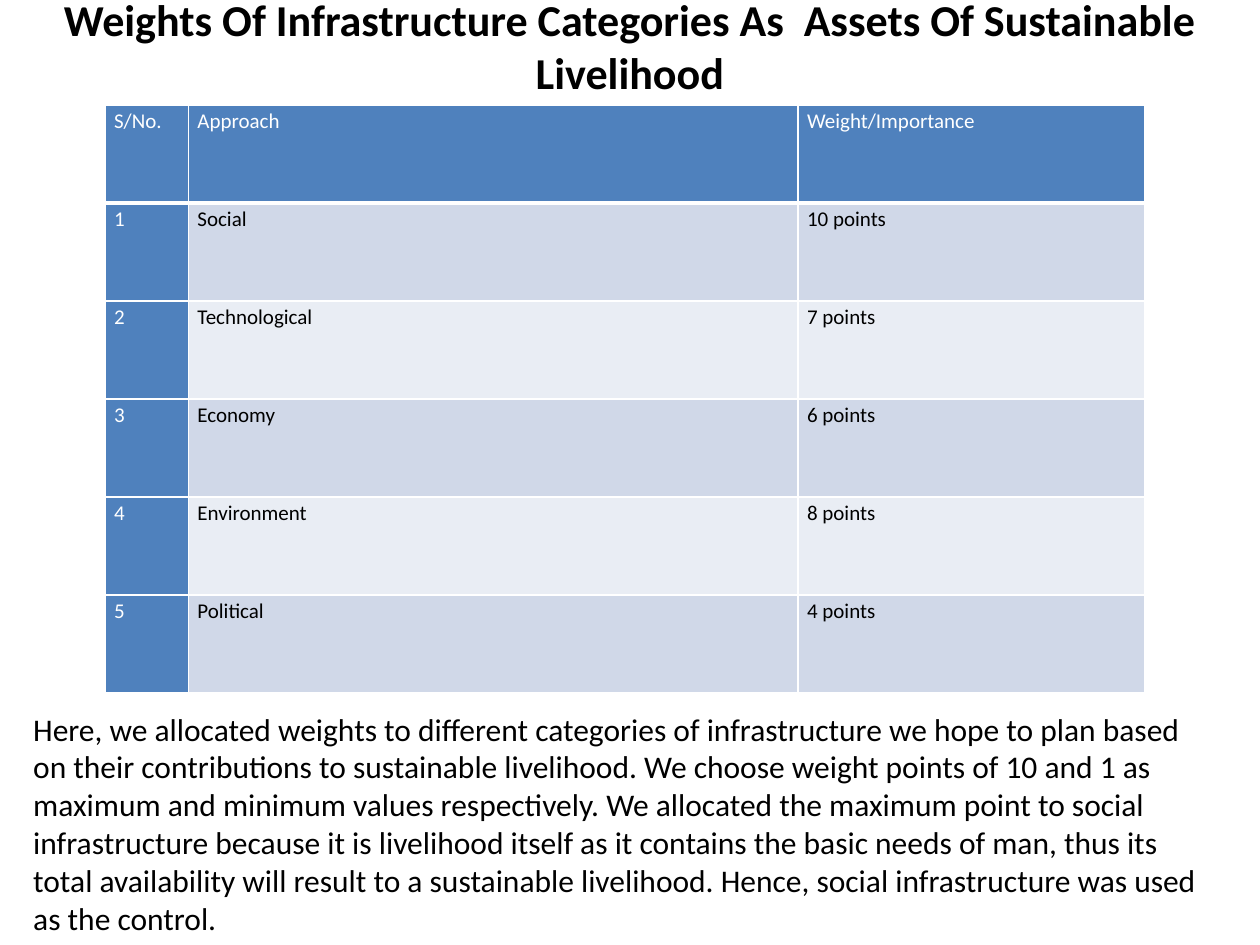
from lxml.etree import SubElement
from pptx import Presentation
from pptx.dml.color import RGBColor
from pptx.enum.text import MSO_ANCHOR as Anchor, MSO_AUTO_SIZE as AutoSize, PP_ALIGN as Align
from pptx.oxml.ns import qn
from pptx.util import Cm, Pt

COLOURS = {"ink": "000000", "white": "FFFFFF", "head": "4F81BD", "odd": "D0D8E8", "even": "E9EDF4"}
TITLE = "Weights Of Infrastructure Categories As  Assets Of Sustainable Livelihood"
ROWS = [
    ("S/No.", "Approach", "Weight/Importance"),
    ("1", "Social", "10 points"),
    ("2", "Technological", "7 points"),
    ("3", "Economy", "6 points"),
    ("4", "Environment", "8 points"),
    ("5", "Political", "4 points"),
]
COLUMN_WIDTHS = (1.68, 12.29, 6.98)
EXPLANATION = (
    "Here, we allocated weights to different categories of infrastructure we hope to plan based on "
    "their contributions to sustainable livelihood. We choose weight points of 10 and 1 as maximum "
    "and minimum values respectively. We allocated the maximum point to social infrastructure "
    "because it is livelihood itself as it contains the basic needs of man, thus its total "
    "availability will result to a sustainable livelihood. Hence, social infrastructure was used as "
    "the control."
)


def rgb(name):
    """Return the named palette colour."""
    return RGBColor.from_string(COLOURS[name])


def write(frame, text, size, colour="ink", bold=False, align=Align.LEFT):
    """Fill a text frame with one formatted paragraph and return it."""
    frame.text = text
    frame.word_wrap = True
    para = frame.paragraphs[0]
    para.alignment = align
    font = para.runs[0].font
    font.name, font.size, font.bold = "Calibri", Pt(size), bold
    font.color.rgb = rgb(colour)
    return para


def add_borders(cell, bottom):
    """Draw white borders round a cell, with the bottom one as wide as given."""
    properties = cell._tc.get_or_add_tcPr()
    for position, (side, width) in enumerate((("L", 1), ("R", 1), ("T", 1), ("B", bottom))):
        line = properties.makeelement(qn(f"a:ln{side}"), {"w": str(Pt(width))})
        fill = SubElement(line, qn("a:solidFill"))
        SubElement(fill, qn("a:srgbClr"), val=COLOURS["white"])
        properties.insert(position, line)


def place_title(page, left, top, width, height):
    """Place the slide title in the given box."""
    title = page.shapes.title
    title.left, title.top, title.width, title.height = Cm(left), Cm(top), Cm(width), Cm(height)
    frame = title.text_frame
    write(frame, TITLE, 25.2, bold=True, align=Align.CENTER)
    frame.auto_size = AutoSize.NONE
    frame.vertical_anchor = Anchor.MIDDLE
    frame.margin_bottom = Cm(0.64)


def place_weights(page, left, top, width, height):
    """Place the table of weights in the given box."""
    table = page.shapes.add_table(
        len(ROWS), len(COLUMN_WIDTHS), Cm(left), Cm(top), Cm(width), Cm(height)
    ).table
    for column, share in zip(table.columns, COLUMN_WIDTHS):
        column.width = Cm(width * share / sum(COLUMN_WIDTHS))
    for r, texts in enumerate(ROWS):
        table.rows[r].height = Cm(height / len(ROWS))
        for c, text in enumerate(texts):
            cell = table.cell(r, c)
            is_head = r == 0 or c == 0
            cell.margin_left = cell.margin_right = Cm(0.18)
            cell.margin_top = cell.margin_bottom = 0
            colour = "white" if is_head else "ink"
            para = write(cell.text_frame, text, 12, colour, align=Align.JUSTIFY)
            para.line_spacing = 1.15
            cell.fill.solid()
            cell.fill.fore_color.rgb = rgb("head" if is_head else "odd" if r % 2 else "even")
            add_borders(cell, bottom=3 if r == 0 else 1)


def place_explanation(page, left, top, width, height):
    """Place the explanation in the given box."""
    box = page.shapes.add_textbox(Cm(left), Cm(top), Cm(width), Cm(height))
    write(box.text_frame, EXPLANATION, 18)
    box.text_frame.auto_size = AutoSize.SHAPE_TO_FIT_TEXT


def main():
    """Build the slide and save the deck."""
    deck = Presentation()
    deck.slide_width, deck.slide_height = Cm(25.4), Cm(19.05)
    page = deck.slides.add_slide(deck.slide_layouts[5])
    place_title(page, 0, 0, 25.4, 2.33)
    place_weights(page, 2.12, 2.12, 20.95, 11.85)
    place_explanation(page, 0.42, 14.18, 24.13, 4.88)
    deck.save("out.pptx")


if __name__ == "__main__":
    main()
